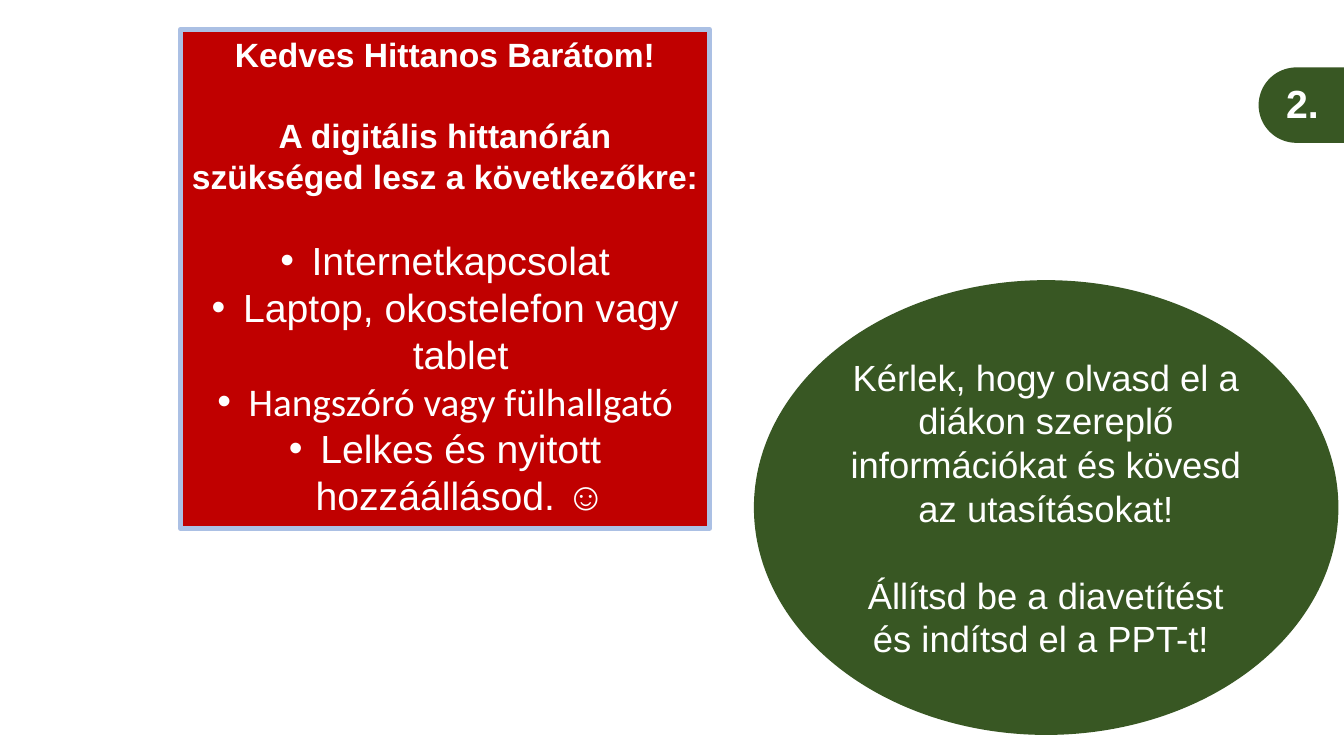
import math
from dataclasses import dataclass

import pptx
import pptx.dml.color
import pptx.enum.shapes
import pptx.enum.text
import pptx.util
from lxml import etree

Cm = pptx.util.Cm
Pt = pptx.util.Pt
Kind = pptx.enum.shapes.MSO_SHAPE
Align = pptx.enum.text.PP_ALIGN
Anchor = pptx.enum.text.MSO_ANCHOR

WHITE = "FFFFFF"
RED = "C00000"
GREEN = "385723"
BLUE = "ABC0E4"


@dataclass
class Line:
    text: str
    size: float
    bold: bool = False
    font: str = "Arial"
    gap: float = 0
    bullet: bool = False


@dataclass
class Panel:
    kind: int
    left: float
    top: float
    width: float
    height: float
    fill: str
    lines: list[Line]
    edge: str = ""
    align: int = Align.CENTER
    anchor: int = Anchor.TOP


PANELS = [
    Panel(Kind.RECTANGLE, 4.55, 0.74, 13.33, 12.57, RED, [
        Line("Kedves Hittanos Barátom!", 24, True),
        Line("A digitális hittanórán szükséged lesz a következőkre:", 24, True, gap=29),
        Line("Internetkapcsolat", 28, gap=29, bullet=True),
        Line("Laptop, okostelefon vagy tablet", 28, bullet=True),
        Line("Hangszóró vagy fülhallgató", 28, font="Calibri", bullet=True),
        Line("Lelkes és nyitott hozzáállásod. ☺", 28, bullet=True),
    ], edge=BLUE),
    Panel(Kind.OVAL, 19, 7.06, 14.73, 11.46, GREEN, [
        Line("Kérlek, hogy olvasd el a diákon szereplő információkat "
             "és kövesd az utasításokat!", 26),
        Line("Állítsd be a diavetítést és indítsd el a PPT-t! ", 26, gap=31),
    ], anchor=Anchor.MIDDLE),
    Panel(Kind.RECTANGLE, 32.16, 1.88, 1.4, 1.45, GREEN,
          [Line("2.", 28, True)], align=Align.LEFT),
]


def shade(hue: str) -> pptx.dml.color.RGBColor:
    return pptx.dml.color.RGBColor.from_string(hue)


def paint(shape, fill: str, edge: str = "") -> None:
    shape.shadow.inherit = False
    shape.fill.solid()
    shape.fill.fore_color.rgb = shade(fill)
    if edge:
        shape.line.color.rgb = shade(edge)
        shape.line.width = Pt(3.75)
    else:
        shape.line.fill.background()


def mark(para) -> None:
    props = para._p.get_or_add_pPr()
    props.set("marL", str(Cm(0.79)))
    props.set("indent", str(-Cm(0.79)))
    space = props.nsmap["a"]
    etree.SubElement(props, f"{{{space}}}buFont", typeface="Arial")
    etree.SubElement(props, f"{{{space}}}buChar", char="•")


def draw(slide, panel: Panel) -> None:
    shape = slide.shapes.add_shape(
        panel.kind, Cm(panel.left), Cm(panel.top), Cm(panel.width), Cm(panel.height))
    paint(shape, panel.fill, panel.edge)
    frame = shape.text_frame
    frame.word_wrap = True
    frame.vertical_anchor = panel.anchor
    for spot, line in enumerate(panel.lines):
        para = frame.add_paragraph() if spot else frame.paragraphs[0]
        para.alignment = panel.align
        if line.gap:
            para.space_before = Pt(line.gap)
        if line.bullet:
            mark(para)
        run = para.add_run()
        run.text = line.text
        run.font.name = line.font
        run.font.size = Pt(line.size)
        run.font.bold = line.bold
        run.font.color.rgb = shade(WHITE)


def tab(slide, left: float, top: float, right: float, tall: float) -> None:
    half = tall / 2
    steps = 40
    arc = []
    for step in range(steps + 1):
        turn = math.pi * (0.5 + step / steps)
        arc.append((Cm(left + half + half * math.cos(turn)),
                    Cm(top + half + half * math.sin(turn))))
    path = slide.shapes.build_freeform(Cm(right), Cm(top + tall))
    path.add_line_segments(arc + [(Cm(right), Cm(top))], close=True)
    paint(path.convert_to_shape(), GREEN)


def main() -> None:
    deck = pptx.Presentation()
    deck.slide_width = Cm(33.87)
    deck.slide_height = Cm(19.05)
    slide = deck.slides.add_slide(deck.slide_layouts[6])
    tab(slide, 31.72, 1.7, 33.87, 1.9)
    for panel in PANELS:
        draw(slide, panel)
    deck.save("out.pptx")


if __name__ == "__main__":
    main()
